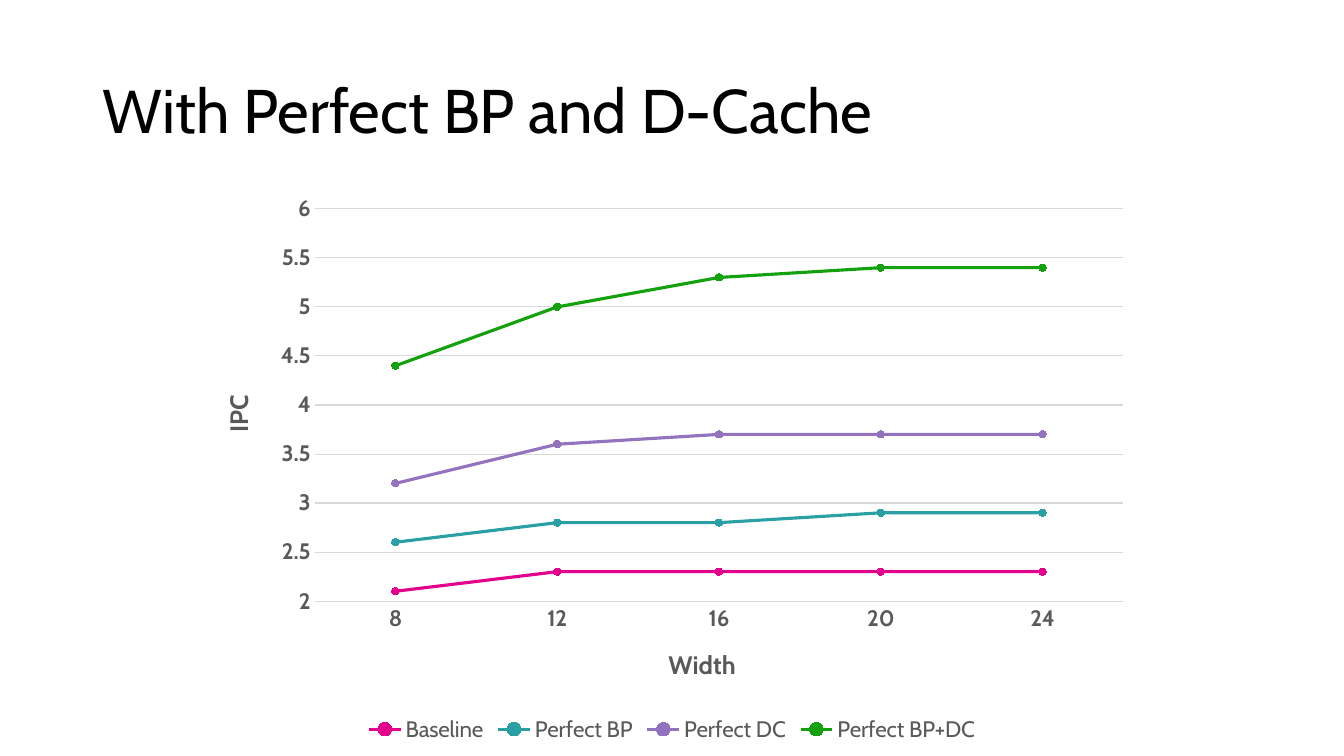
from lxml import etree
from pptx import Presentation
from pptx import util as u
from pptx.chart.data import CategoryChartData
from pptx.dml.color import RGBColor
from pptx.enum import chart as kinds, text
from pptx.oxml import ns

BLACK = RGBColor(0x00, 0x00, 0x00)
GRAY = RGBColor(0x59, 0x59, 0x59)
GRID = RGBColor(0xD9, 0xD9, 0xD9)
PINK = RGBColor(0xE3, 0x00, 0x8C)
TEAL = RGBColor(0x2A, 0xA0, 0xA4)
PURPLE = RGBColor(0x93, 0x73, 0xC0)
GREEN = RGBColor(0x13, 0xA1, 0x0E)

WIDTHS = ["8", "12", "16", "20", "24"]
IPC = [
    ("Baseline", PINK, (2.1, 2.3, 2.3, 2.3, 2.3)),
    ("Perfect BP", TEAL, (2.6, 2.8, 2.8, 2.9, 2.9)),
    ("Perfect DC", PURPLE, (3.2, 3.6, 3.7, 3.7, 3.7)),
    ("Perfect BP+DC", GREEN, (4.4, 5, 5.3, 5.4, 5.4)),
]
PLOT_AREA = {"x": 0.12, "y": 0.04, "w": 0.86, "h": 0.7}


def assign(target, values):
    for name, value in values.items():
        setattr(target, name, value)


class SlideBuilder:
    """Holds the deck style and the current slide."""

    def __init__(self, deck, face):
        self.face = face
        self.slide = deck.slides.add_slide(deck.slide_layouts[5])

    def style(self, font, size, color, bold=False):
        assign(font, {"name": self.face, "size": u.Pt(size), "bold": bold})
        font.color.rgb = color

    def stroke(self, line, color, width):
        line.color.rgb = color
        line.width = u.Pt(width)

    def title(self, wording, left, top, width, height):
        heading = self.slide.shapes.title
        box = {"left": left, "top": top, "width": width, "height": height}
        assign(heading, {name: u.Inches(size) for name, size in box.items()})
        heading.text_frame.text = wording
        assign(heading.text_frame, {"vertical_anchor": text.MSO_ANCHOR.MIDDLE, "word_wrap": True})
        line = heading.text_frame.paragraphs[0]
        assign(line, {"alignment": text.PP_ALIGN.LEFT, "line_spacing": 0.9})
        self.style(line.runs[0].font, 44, BLACK)

    def axis(self, axis, caption, values):
        assign(axis, {"major_tick_mark": kinds.XL_TICK_MARK.NONE,
                      "minor_tick_mark": kinds.XL_TICK_MARK.NONE, **values})
        self.style(axis.tick_labels.font, 16, GRAY, True)
        axis.axis_title.text_frame.text = caption
        self.style(axis.axis_title.text_frame.paragraphs[0].runs[0].font, 18, GRAY, True)

    def place_plot(self, chart, fractions):
        plot_area = chart.plots[0]._element.getparent()
        for old in plot_area.findall(ns.qn("c:layout")):
            plot_area.remove(old)
        layout = etree.Element(ns.qn("c:layout"))
        manual = etree.SubElement(layout, ns.qn("c:manualLayout"))
        settings = {"layoutTarget": "inner", "xMode": "edge", "yMode": "edge", **fractions}
        for name, value in settings.items():
            etree.SubElement(manual, ns.qn(f"c:{name}")).set("val", str(value))
        plot_area.insert(0, layout)

    def line_chart(self, categories, rows, left, top, width, height):
        data = CategoryChartData()
        data.categories = categories
        for name, _, values in rows:
            data.add_series(name, values)
        box = [u.Inches(size) for size in (left, top, width, height)]
        chart = self.slide.shapes.add_chart(kinds.XL_CHART_TYPE.LINE_MARKERS, *box, data).chart
        assign(chart, {"has_title": False, "has_legend": True})
        self.style(chart.font, 10, BLACK)
        assign(chart.legend, {"position": kinds.XL_LEGEND_POSITION.BOTTOM,
                              "include_in_layout": False})
        self.style(chart.legend.font, 16, GRAY)
        chart.plots[0].vary_by_categories = False
        for series, (_, color, _) in zip(chart.plots[0].series, rows):
            series.smooth = False
            self.stroke(series.format.line, color, 2.25)
            assign(series.marker, {"style": kinds.XL_MARKER_STYLE.CIRCLE, "size": 5})
            series.marker.format.fill.solid()
            series.marker.format.fill.fore_color.rgb = color
            self.stroke(series.marker.format.line, color, 0.75)
        self.axis(chart.category_axis, "Width", {"has_major_gridlines": False})
        self.stroke(chart.category_axis.format.line, GRID, 0.75)
        self.axis(chart.value_axis, "IPC", {"minimum_scale": 2, "maximum_scale": 6,
                                            "major_unit": 0.5, "has_major_gridlines": True})
        chart.value_axis.tick_labels.number_format = "General"
        chart.value_axis.tick_labels.number_format_is_linked = False
        chart.value_axis.format.line.fill.background()
        self.stroke(chart.value_axis.major_gridlines.format.line, GRID, 0.75)
        self.place_plot(chart, PLOT_AREA)


def main():
    deck = Presentation()
    assign(deck, {"slide_width": u.Inches(13.33), "slide_height": u.Inches(7.5)})
    builder = SlideBuilder(deck, "Cabin")
    builder.line_chart(WIDTHS, IPC, 2, 1.85, 9.33, 5.56)
    builder.title("With Perfect BP and D-Cache", 0.92, 0.4, 11.5, 1.45)
    deck.save("out.pptx")


if __name__ == "__main__":
    main()
